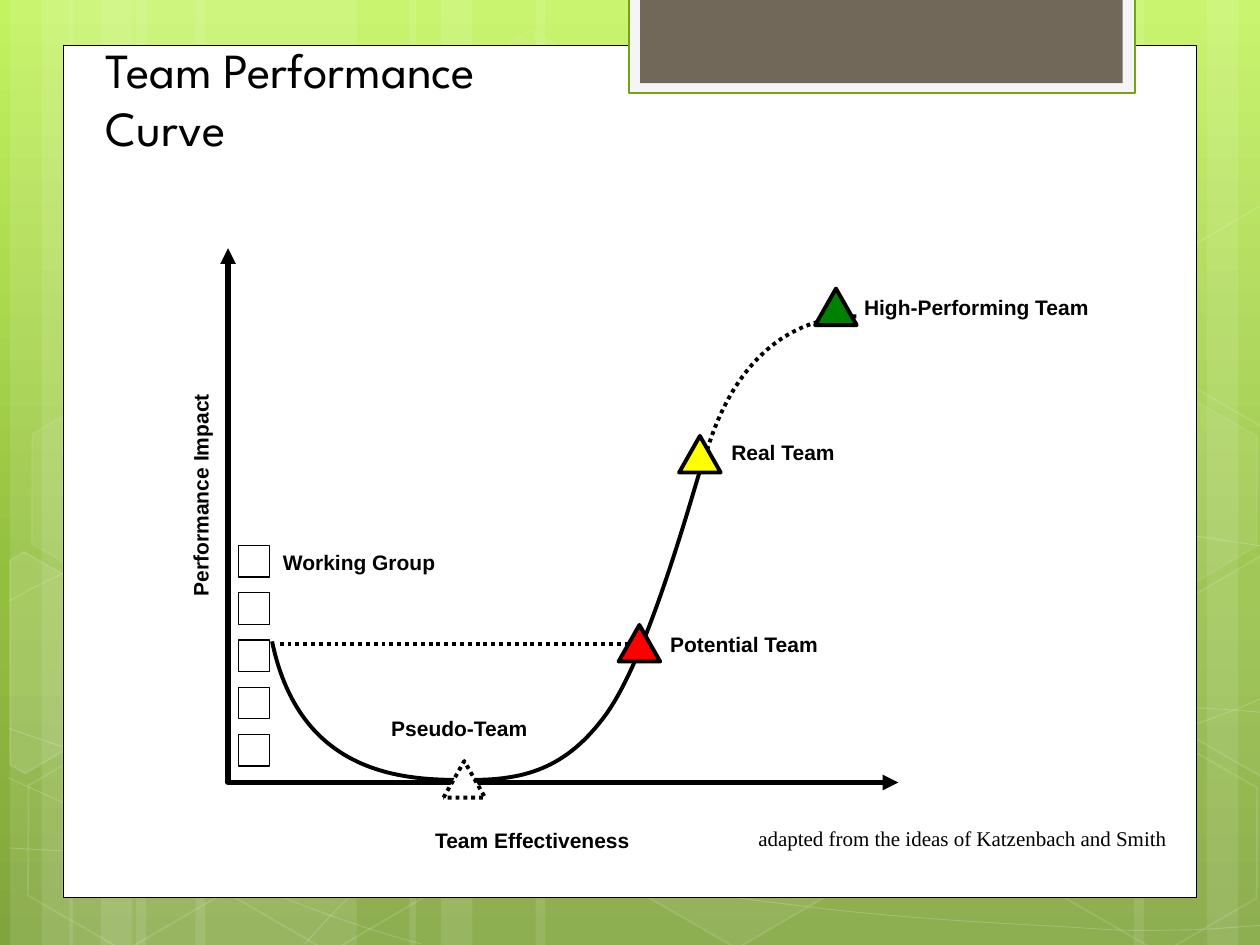
from copy import deepcopy

from lxml import etree
from pptx import Presentation
from pptx.dml.color import RGBColor
from pptx.enum.dml import MSO_LINE
from pptx.enum.shapes import MSO_CONNECTOR, MSO_SHAPE
from pptx.enum.text import MSO_ANCHOR, MSO_AUTO_SIZE, PP_ALIGN
from pptx.oxml.ns import qn
from pptx.util import Cm, Pt

RECT, HEXAGON, TRIANGLE = MSO_SHAPE.RECTANGLE, MSO_SHAPE.HEXAGON, MSO_SHAPE.ISOSCELES_TRIANGLE
DOT = MSO_LINE.ROUND_DOT
LEFT, CENTER = PP_ALIGN.LEFT, PP_ALIGN.CENTER
COLORS = {
    "white": "FFFFFF", "black": "000000", "red": "FF0000", "yellow": "FFFF00",
    "green": "008000", "tab": "71685A", "tab_edge": "F5F5F5", "tab_line": "74A510",
    "lime": "C3F35F", "leaf": "93BF3F", "moss": "81A53E",
}
BACKDROP = [(0, "lime"), (0.62, "leaf"), (1, "moss")]
LABEL = {"size": Pt(12), "name": "Arial", "bold": True}
CREDIT = {"size": Pt(12), "name": "Times New Roman"}
TITLE = {"size": Pt(28), "name": "League Spartan"}

BANDS = [
    (1.08, 1.75), (0.08, 0.5), (0.33, 0.83), (1.55, 1.75), (0.55, 0.5), (0.8, 0.83),
    (7.33, 1.75), (9.58, 0.5), (9, 0.83), (4.25, 3.08), (3.25, 0.5), (3.5, 0.83),
]
WAVES = [
    [(0.07, 6.73), (0.61, 6.76), (1.15, 6.79), (1.9, 6.78), (2.65, 6.77), (3.58, 6.75),
     (4.58, 6.65), (5.58, 6.55), (7, 6.36), (7.92, 6.17), (8.83, 5.98), (9.77, 5.68), (10.07, 5.51)],
    [(0.07, 4.77), (0.36, 4.61), (0.65, 4.46), (1.21, 4.31), (1.78, 4.16), (2.59, 3.94),
     (3.47, 3.87), (4.36, 3.8), (5.44, 3.79), (6.54, 3.87), (7.64, 3.95), (9.47, 4.26), (10.07, 4.34)],
    [(0.06, 6.17), (1.27, 6.72), (2.47, 7.27), (3.34, 7.49)],
    [(0.07, 5.78), (0.38, 5.89), (0.7, 6), (1.28, 6.16), (1.86, 6.31), (2.73, 6.56), (3.57, 6.73),
     (4.4, 6.9), (5.45, 7.08), (6.28, 7.18), (7.11, 7.29), (8, 7.33), (8.53, 7.36),
     (9.05, 7.4), (9.19, 7.38), (9.45, 7.38), (9.71, 7.37), (9.89, 7.35), (10.07, 7.34)],
    [(2.42, 7.49), (2.6, 7.29), (2.78, 7.09), (3.02, 6.91), (3.26, 6.73), (3.6, 6.53), (3.88, 6.39),
     (4.16, 6.25), (4.33, 6.19), (4.7, 6.09), (5.06, 5.99), (5.73, 5.85), (6.08, 5.78),
     (6.44, 5.71), (6.49, 5.71), (6.8, 5.69), (7.11, 5.66), (7.6, 5.63), (7.94, 5.62),
     (8.29, 5.61), (8.86, 5.62), (8.86, 5.62), (9.08, 5.62), (9.31, 5.62), (9.53, 5.62),
     (9.71, 5.63), (9.88, 5.64), (9.97, 5.65), (10.06, 5.66), (10.03, 5.65), (10.06, 5.66)],
]
HEXAGONS = [
    (3.34, 0.36, 4, 8), (4.97, 5.89, 6, 12), (0.11, 5.91, 0, 12), (0.14, 3.12, 7, 8),
    (1.74, 5.92, 0, 12), (7.53, 4.53, 10, 12), (8.34, 5.93, 0, 12), (8.34, 3.14, 7, 8),
]
CUT_HEXAGONS = [
    ([(0.08, 4.45), (0.19, 4.38), (0.96, 4.82), (0.95, 5.7), (0.2, 6.14), (0.08, 6.07)], 10),
    ([(9.26, 4.85), (10.01, 4.41), (10.09, 4.46), (10.09, 6.13), (10.02, 6.17), (9.26, 5.73)], 4),
    ([(9.26, 2.07), (10.01, 1.63), (10.1, 1.68), (10.09, 3.35), (10.02, 3.39), (9.26, 2.95)], 0),
]
TEAM_CURVE = [(2.16, 5.09), (2.39, 6.21), (3.3, 6.19), (3.73, 6.19), (4.15, 6.19), (4.49, 6.11),
              (4.81, 5.67), (5.12, 5.24), (5.42, 4.19), (5.59, 3.62)]
HIGH_CURVE = [(5.58, 3.69), (5.67, 3.33), (5.96, 2.51), (6.82, 2.51)]
LABELS = [
    ("Performance Impact", 0.69, 3.78, 1.8, 270), ("Team Effectiveness", 3.35, 6.52, 1.75, 0),
    ("High-Performing Team", 6.75, 2.29, 2, 0), ("Real Team", 5.7, 3.44, 1.03, 0),
    ("Potential Team", 5.21, 4.96, 1.39, 0), ("Pseudo-Team", 3, 5.63, 1.29, 0),
    ("Working Group", 2.14, 4.31, 1.42, 0),
]


def inch(n):
    return Cm(n * 2.54)


def rgb(name):
    return RGBColor.from_string(COLORS[name])


def set_alpha(fill_parent, percent):
    clr = fill_parent.find(qn("a:solidFill")).find(qn("a:srgbClr"))
    etree.SubElement(clr, qn("a:alpha")).set("val", str(percent * 1000))


def style_line(line, color, width, dash=None):
    line.color.rgb = rgb(color)
    line.width = Pt(width)
    if dash:
        line.dash_style = dash


def paint(sp, fill=None, fill_alpha=100, line=None, line_alpha=100):
    sp.shadow.inherit = False
    if fill and fill_alpha:
        sp.fill.solid()
        sp.fill.fore_color.rgb = rgb(fill)
        if fill_alpha < 100:
            set_alpha(sp._element.spPr, fill_alpha)
    else:
        sp.fill.background()
    if line:
        style_line(sp.line, *line)
        if line_alpha < 100:
            set_alpha(sp.line._ln, line_alpha)
    else:
        sp.line.fill.background()


def add_box(slide, kind, x, y, w, h, **look):
    sp = slide.shapes.add_shape(kind, inch(x), inch(y), inch(w), inch(h))
    paint(sp, **look)
    return sp


def add_outline(slide, points, close=False, **look):
    start, *rest = [(inch(x), inch(y)) for x, y in points]
    builder = slide.shapes.build_freeform(*start)
    builder.add_line_segments(rest, close=close)
    sp = builder.convert_to_shape()
    paint(sp, **look)
    return sp


def add_curve(slide, points, **look):
    sp = add_outline(slide, points, **look)
    segments = list(sp._element.iter(qn("a:lnTo")))
    for i in range(0, len(segments), 3):
        curve = etree.Element(qn("a:cubicBezTo"))
        segments[i].addprevious(curve)
        for segment in segments[i:i + 3]:
            curve.append(segment[0])
            segment.getparent().remove(segment)


def fill_text(sp, lines, font, align):
    tf = sp.text_frame
    tf.word_wrap = False
    tf.auto_size = MSO_AUTO_SIZE.SHAPE_TO_FIT_TEXT
    tf.vertical_anchor = MSO_ANCHOR.TOP
    for i, text in enumerate(lines):
        p = tf.add_paragraph() if i else tf.paragraphs[0]
        p.alignment = align
        r = p.add_run()
        r.text = text
        r.font.color.rgb = rgb("black")
        for name, value in font.items():
            setattr(r.font, name, value)


def add_label(slide, text, x, y, w, rotation=0, font=LABEL, align=CENTER):
    sp = slide.shapes.add_textbox(inch(x), inch(y), inch(w), inch(0.3))
    sp.rotation = rotation
    fill_text(sp, [text], font, align)


def add_backdrop(slide):
    fill = slide.background.fill
    fill.gradient()
    fill.gradient_angle = 270
    first = slide._element.find(".//" + qn("a:gs"))
    first.addnext(deepcopy(first))
    for stop, (position, color) in zip(fill.gradient_stops, BACKDROP):
        stop.position = position
        stop.color.rgb = rgb(color)
    for x, w in BANDS:
        add_box(slide, RECT, x, 0, w, 7.5, fill="white", fill_alpha=10)
    for points in WAVES:
        add_curve(slide, points, line=("white", 0.5), line_alpha=20)
    for x, y, fill_alpha, line_alpha in HEXAGONS:
        sp = add_box(slide, HEXAGON, x, y, 1.75, 1.52, fill="white", fill_alpha=fill_alpha,
                     line=("white", 1), line_alpha=line_alpha)
        sp.adjustments[0] = 0.285
        sp.rotation = 30
    for points, fill_alpha in CUT_HEXAGONS:
        add_outline(slide, points, close=True, fill="white", fill_alpha=fill_alpha,
                    line=("white", 1), line_alpha=12)


def add_panel(slide):
    add_box(slide, RECT, 0.5, 0.36, 9, 6.76, fill="white", line=("black", 0.5))
    add_box(slide, RECT, 4.99, -0.02, 4.02, 0.76, fill="tab_edge", line=("tab_line", 1.25))
    add_box(slide, RECT, 5.08, -0.02, 3.83, 0.68, fill="tab")


def add_title(slide):
    sp = slide.shapes.title
    for name, value in {"left": 0.74, "top": 0.26, "width": 3.87, "height": 1.04}.items():
        setattr(sp, name, inch(value))
    fill_text(sp, ["Team Performance", "Curve"], TITLE, LEFT)
    slide.shapes._spTree.append(sp._element)


def add_marker(slide, x, y, color, dash=None):
    add_box(slide, TRIANGLE, x, y, 0.33, 0.29, fill=color, line=("black", 2.25, dash))


def add_curve_diagram(slide):
    axes = add_outline(slide, [(1.81, 1.97), (1.81, 6.21), (7.13, 6.21)], line=("black", 3))
    for end in ("a:headEnd", "a:tailEnd"):
        etree.SubElement(axes.line._ln, qn(end)).set("type", "triangle")
    add_curve(slide, TEAM_CURVE, line=("black", 2.25))
    for i in range(5):
        add_box(slide, RECT, 1.89, 4.33 + i * 0.375, 0.25, 0.25, line=("black", 0.75))
    add_marker(slide, 3.52, 6.04, "white", DOT)
    cxn = slide.shapes.add_connector(MSO_CONNECTOR.STRAIGHT, inch(2.22), inch(5.11), inch(5.14), inch(5.11))
    style_line(cxn.line, "black", 2.25, DOT)
    etree.SubElement(cxn._element.spPr, qn("a:effectLst"))
    add_curve(slide, HIGH_CURVE, line=("black", 2.25, DOT))
    for x, y, color in [(4.91, 4.96, "red"), (5.39, 3.46, "yellow"), (6.47, 2.29, "green")]:
        add_marker(slide, x, y, color)
    for label in LABELS:
        add_label(slide, *label)
    add_label(slide, "adapted from the ideas of Katzenbach and Smith", 5.92, 6.5, 3.46,
              font=CREDIT, align=LEFT)


def main():
    prs = Presentation()
    prs.slide_width, prs.slide_height = Cm(25.4), Cm(19.05)
    slide = prs.slides.add_slide(prs.slide_layouts[5])
    add_backdrop(slide)
    add_panel(slide)
    add_curve_diagram(slide)
    add_title(slide)
    prs.save("out.pptx")


if __name__ == "__main__":
    main()
